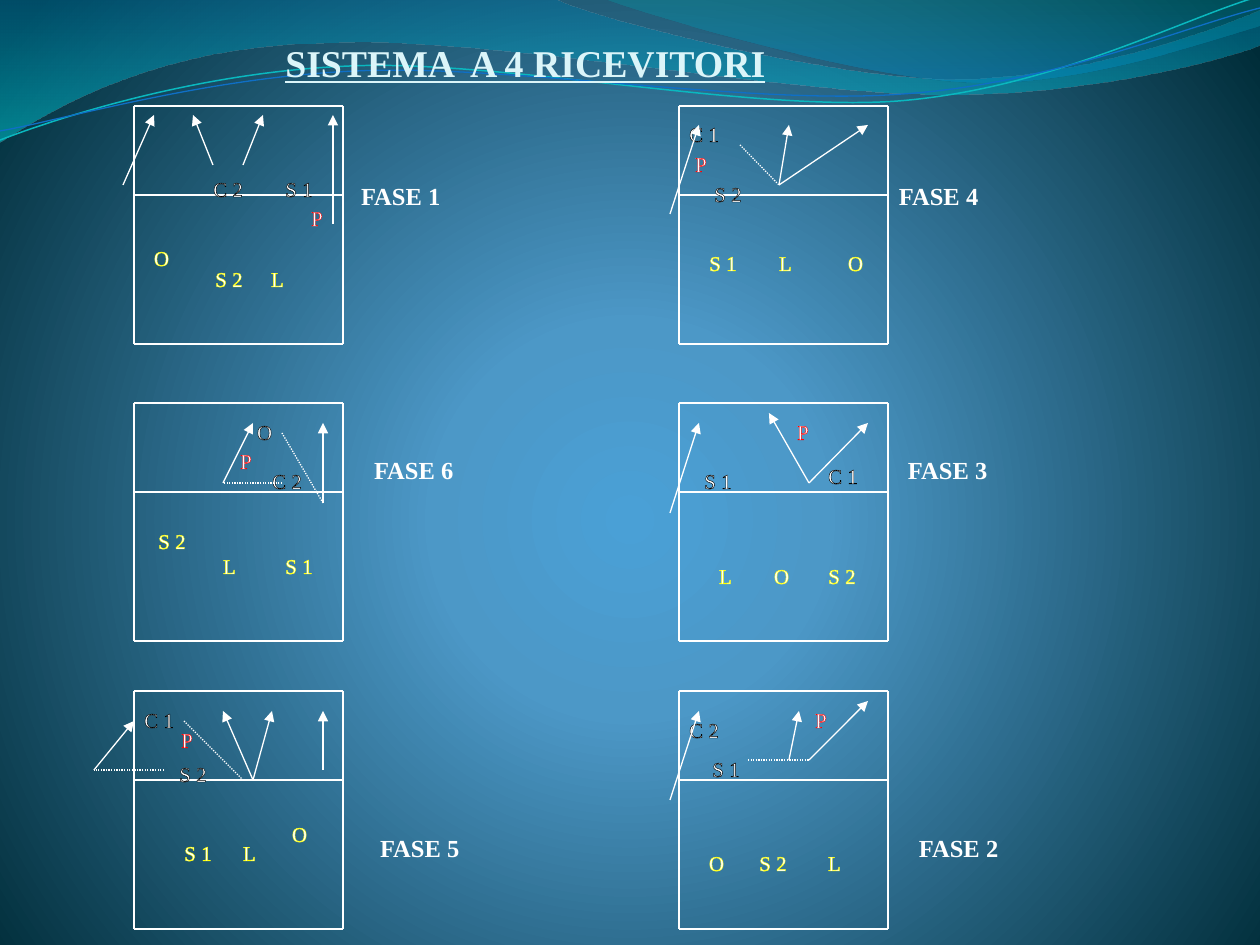
from lxml import etree
from pptx import Presentation
from pptx import util as u
from pptx.dml.color import RGBColor
from pptx.enum import dml, shapes, text
from pptx.oxml import parse_xml
from pptx.oxml.ns import nsdecls, qn

PX = 914400 // 126
FONT = "Times New Roman"
COLORS = {"white": "FFFFFF", "title": "DBF5F9", "front": "000000", "back": "FFFF00",
          "setter": "FF0000", "cyan": "0AB8BF", "blue": "0F6FC6"}
BACKDROP = [(0, "4AA0D6", 100), (25, "4C98C7", 100), (100, "002C38", 100)]
COURT_W, COURT_H, NET = 209, 238, 89
COLUMNS, ROWS = (134, 679), (106, 403, 691)
MARK_WIDTHS = {"O": 15, "L": 12, "P": 12, "S": 28, "C": 30}

# Each wave: start, segments of one point (line) or three (curve), gradient stops
WAVES = [
    ((0, 0), [[(554, -1)], [(600, 21), (837, 79), (955, 79)],
              [(1075, 79), (1207, 33), (1260, 11)], [(1261, 45)],
              [(1238, 55), (1096, 96), (940, 94)], [(784, 94), (481, 35), (324, 43)],
              [(163, 45), (58, 105), (-1, 142)]],
     [(0, "0074A1", 45), (100, "00C6CF", 55)]),
    ((604, -1), [[(641, 14), (859, 78), (969, 82)],
                 [(1079, 87), (1211, 40), (1260, 26)], [(1260, 0)]],
     [(0, "00A1A9", 30), (80, "008BBF", 45)]),
]
# Each ripple: start, segments, colour, width in points
RIPPLES = [
    ((0, 140), [[(60, 117), (199, 72), (349, 66)], [(498, 59), (747, 112), (898, 101)],
                [(1050, 89), (1182, 19), (1257, -3)]], "cyan", 0.85),
    ((0, 131), [[(59, 121), (207, 77), (357, 71)], [(508, 64), (752, 106), (903, 94)],
                [(1053, 84), (1186, 26), (1260, 8)]], "blue", 0.75),
]
# Each phase: column, row, players (name, left, top), arrows and dotted moves (x1, y1, x2, y2)
PHASES = [
    (0, 0, [("O", 20, 133), ("C 2", 79, 64), ("S 1", 151, 64), ("P", 177, 93),
            ("S 2", 81, 154), ("L", 137, 154)],
     [(-11, 79, 20, 9), (199, 118, 199, 9), (79, 59, 59, 9), (109, 59, 129, 9)], []),
    (0, 1, [("O", 123, 10), ("C 2", 138, 59), ("S 1", 151, 144), ("P", 106, 39),
            ("S 2", 24, 119), ("L", 89, 144)],
     [(189, 100, 189, 20), (89, 80, 119, 20)], [(148, 30, 189, 100), (148, 80, 89, 80)]),
    (0, 2, [("O", 158, 124), ("L", 109, 143), ("S 1", 50, 143), ("P", 47, 30),
            ("S 2", 45, 64), ("C 1", 10, 10)],
     [(189, 79, 189, 20), (119, 89, 138, 20), (119, 89, 89, 20), (-40, 79, 0, 30)],
     [(50, 30, 109, 89), (30, 79, -40, 79)]),
    (1, 0, [("O", 169, 138), ("L", 100, 138), ("S 1", 30, 138), ("P", 16, 39),
            ("S 2", 35, 69), ("C 1", 10, 9)],
     [(100, 79, 110, 19), (-9, 108, 20, 19), (100, 79, 189, 19)], [(61, 39, 100, 79)]),
    (1, 1, [("O", 95, 154), ("S 2", 149, 154), ("L", 40, 154), ("P", 118, 10),
            ("S 1", 25, 59), ("C 1", 149, 54)],
     [(130, 80, 189, 20), (-9, 110, 20, 20), (130, 80, 90, 10)], []),
    (1, 2, [("O", 30, 153), ("L", 149, 153), ("S 2", 80, 153), ("P", 136, 10),
            ("S 1", 33, 59), ("C 2", 10, 20)],
     [(130, 69, 189, 10), (-9, 109, 20, 20), (110, 69, 120, 20)], [(69, 69, 130, 69)]),
]
# Labels of each column: text and left edge
LABELS = [[("FASE 1", 361), ("FASE 6", 374), ("FASE 5", 380)],
          [("FASE 4", 899), ("FASE 3", 908), ("FASE 2", 919)]]
LABEL_GAPS = (0, 245, 348)


def rgb(name):
    return RGBColor.from_string(COLORS[name])


def gradient(stops, direction):
    marks = "".join(f'<a:gs pos="{pos * 1000}"><a:srgbClr val="{color}">'
                    f'<a:alpha val="{alpha * 1000}"/></a:srgbClr></a:gs>'
                    for pos, color, alpha in stops)
    return parse_xml(f'<a:gradFill {nsdecls("a")} rotWithShape="1">'
                     f'<a:gsLst>{marks}</a:gsLst>{direction}</a:gradFill>')


def set_gradient(fill, properties, stops, direction):
    fill.solid()
    solid = properties.find(qn("a:solidFill"))
    properties.replace(solid, gradient(stops, direction))


def style_font(font, size, color, bold=False):
    font.name, font.size, font.bold = FONT, u.Pt(size), bold
    font.color.rgb = rgb(color)


def place(shape, left, top, width, height):
    shape.left, shape.top, shape.width, shape.height = (
        n * PX for n in (left, top, width, height))


def set_margins(frame, top=0):
    frame.margin_left = frame.margin_right = frame.margin_bottom = 0
    frame.margin_top = top * PX


def add_curve(page, start, segments, close):
    """Add an outline behind the title, turning each three-point segment into a Bézier."""
    builder = page.shapes.build_freeform(*start, scale=PX)
    builder.add_line_segments([point for segment in segments for point in segment], close=close)
    shape = builder.convert_to_shape()
    shape.shadow.inherit = False
    steps = iter(list(shape._element.spPr.iter(qn("a:lnTo"))))
    for segment in segments:
        group = [next(steps) for _ in segment]
        if len(group) == 3:
            curve = etree.Element(qn("a:cubicBezTo"))
            group[0].addprevious(curve)
            for step in group:
                curve.append(step[0])
                step.getparent().remove(step)
    page.shapes.title._element.addprevious(shape._element)
    return shape


def add_backdrop(page):
    set_gradient(page.background.fill, page._element.cSld.bg.bgPr, BACKDROP,
                 '<a:path path="circle">'
                 '<a:fillToRect l="10000" t="110000" r="10000" b="100000"/></a:path>')
    for start, segments, stops in WAVES:
        wave = add_curve(page, start, segments, True)
        set_gradient(wave.fill, wave._element.spPr, stops, '<a:lin ang="5400000" scaled="1"/>')
        wave.line.fill.background()
    for start, segments, color, width in RIPPLES:
        ripple = add_curve(page, start, segments, False)
        ripple.fill.background()
        ripple.line.color.rgb, ripple.line.width = rgb(color), u.Pt(width)


def add_title(page, left, top, width, height):
    title = page.shapes.title
    place(title, left, top, width, height)
    frame = title.text_frame
    frame.text = "SISTEMA  A 4 RICEVITORI"
    frame.vertical_anchor, frame.auto_size = text.MSO_ANCHOR.BOTTOM, text.MSO_AUTO_SIZE.NONE
    set_margins(frame, 6)
    para = frame.paragraphs[0]
    para.alignment = text.PP_ALIGN.CENTER
    style_font(para.runs[0].font, 21.6, "title", True)
    para.runs[0].font.underline = True


def add_labels(body, labels, left, top, width, height):
    """Fill a body placeholder with the phase names of one column."""
    place(body, left, top, width, height)
    frame = body.text_frame
    frame.text = "\n".join(label for label, _ in labels)
    frame.auto_size, frame.vertical_anchor = text.MSO_AUTO_SIZE.NONE, text.MSO_ANCHOR.TOP
    set_margins(frame, 95)
    for para, (_, label_left), gap in zip(frame.paragraphs, labels, LABEL_GAPS):
        para.space_before, para.line_spacing = u.Emu(gap * PX), 1.0
        properties = para._p.get_or_add_pPr()
        properties.set("marL", str((label_left - left) * PX))
        properties.set("indent", "0")
        etree.SubElement(properties, qn("a:buNone"))
        style_font(para.runs[0].font, 14, "white", True)


def add_line(page, left, top, ends, arrow=False, dotted=False):
    x1, y1, x2, y2 = ends
    line = page.shapes.add_connector(shapes.MSO_CONNECTOR.STRAIGHT, (left + x1) * PX,
                                     (top + y1) * PX, (left + x2) * PX, (top + y2) * PX)
    line.line.color.rgb, line.line.width = rgb("white"), u.Pt(0.75)
    if dotted:
        line.line.dash_style = dml.MSO_LINE.ROUND_DOT
    if arrow:
        etree.SubElement(line.line._get_or_add_ln(), qn("a:tailEnd"), type="triangle")
    etree.SubElement(line._element.spPr, qn("a:effectLst"))


def add_player(page, name, left, top, outline):
    box = page.shapes.add_textbox(left * PX, top * PX, MARK_WIDTHS[name[0]] * PX, 31 * PX)
    frame = box.text_frame
    frame.text, frame.word_wrap = name, False
    set_margins(frame, 6)
    para = frame.paragraphs[0]
    para.alignment = text.PP_ALIGN.CENTER
    span = para.runs[0]
    style_font(span.font, 12, "white")
    span._r.get_or_add_rPr().insert(0, parse_xml(
        f'<a:ln {nsdecls("a")} w="9525"><a:solidFill><a:srgbClr val="{COLORS[outline]}"/>'
        '</a:solidFill></a:ln>'))


def add_court(page, left, top, players, arrows, moves):
    for x in (0, COURT_W):
        add_line(page, left, top, (x, 0, x, COURT_H))
    for y in (0, NET, COURT_H):
        add_line(page, left, top, (0, y, COURT_W, y))
    for name, x, y in players:
        outline = "setter" if name == "P" else "back" if y > NET else "front"
        add_player(page, name, left + x, top + y, outline)
    for ends in arrows:
        add_line(page, left, top, ends, arrow=True)
    for ends in moves:
        add_line(page, left, top, ends, dotted=True)


def main():
    deck = Presentation()
    deck.slide_width, deck.slide_height = u.Inches(10), u.Inches(7.5)
    page = deck.slides.add_slide(deck.slide_layouts[3])
    add_backdrop(page)
    add_title(page, 63, 37, 925, 48)
    for index, left in enumerate((54, 594)):
        add_labels(page.placeholders[index + 1], LABELS[index], left, 86, 540, 859)
    for column, row, *parts in PHASES:
        add_court(page, COLUMNS[column], ROWS[row], *parts)
    deck.save("out.pptx")


if __name__ == "__main__":
    main()
